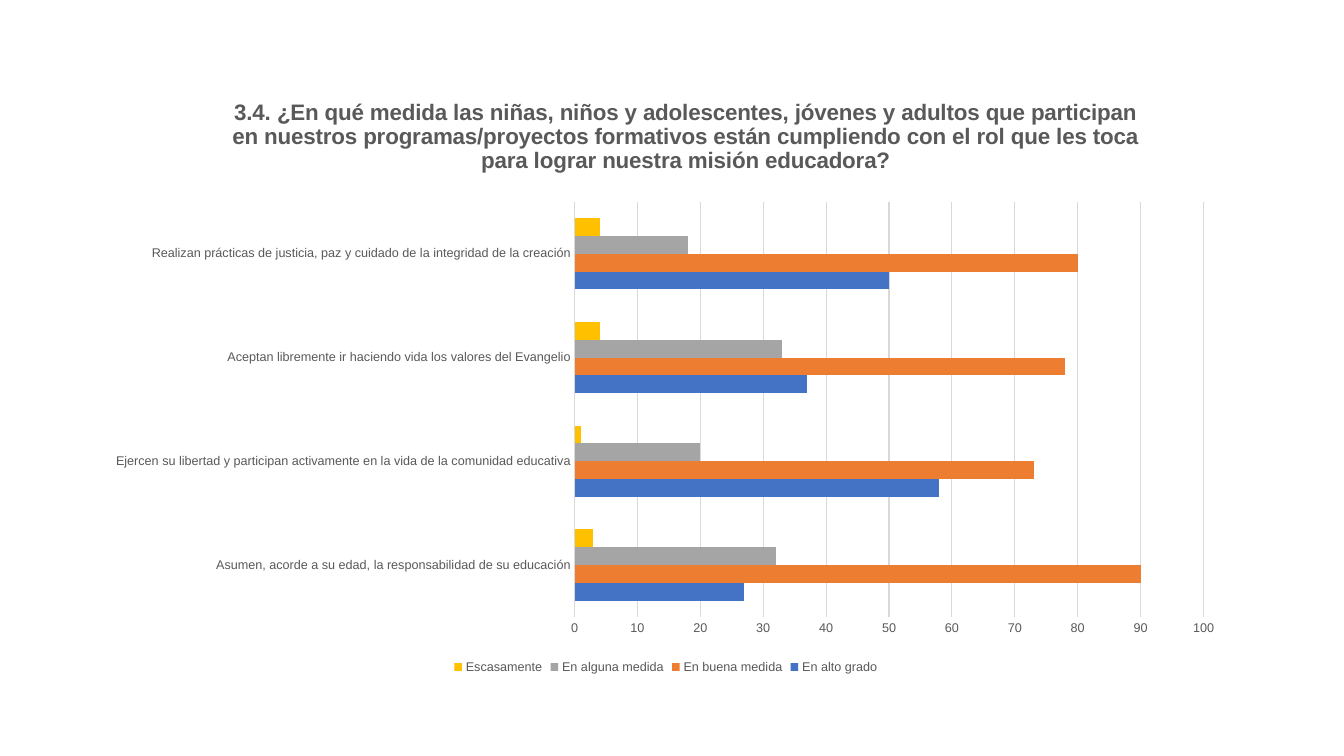
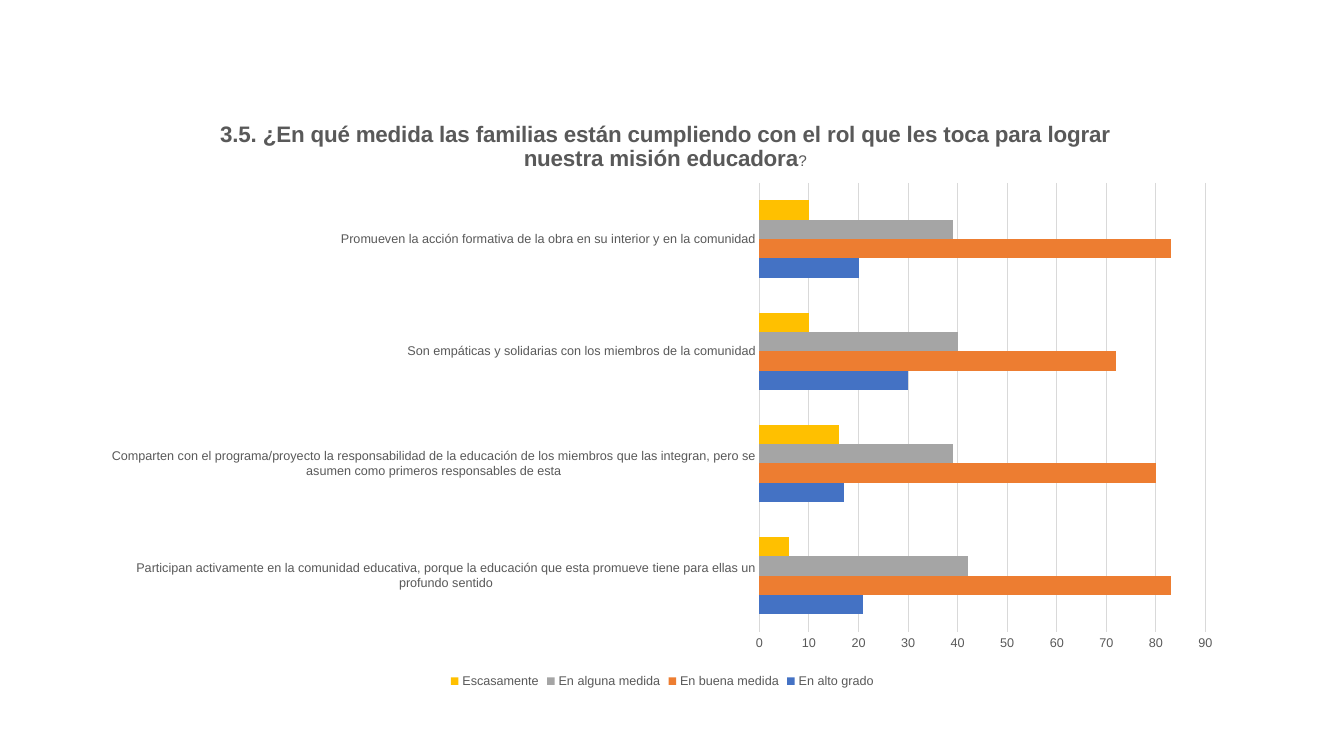
from lxml.etree import SubElement
from pptx import Presentation
from pptx.chart.data import CategoryChartData as ChartData
from pptx.dml.color import RGBColor
from pptx.enum.chart import XL_CHART_TYPE as ChartType
from pptx.enum.chart import XL_LEGEND_POSITION as LegendPosition
from pptx.enum.chart import XL_TICK_MARK as TickMark
from pptx.oxml.ns import qn
from pptx.util import Pt

BLACK = RGBColor(0x00, 0x00, 0x00)
TEXT_GRAY = RGBColor(0x59, 0x59, 0x59)
LINE_GRAY = RGBColor(0xD9, 0xD9, 0xD9)
BLUE = RGBColor(0x44, 0x72, 0xC4)
ORANGE = RGBColor(0xED, 0x7D, 0x31)
GRAY = RGBColor(0xA5, 0xA5, 0xA5)
YELLOW = RGBColor(0xFF, 0xC0, 0x00)

FONT = "Arial"
RATINGS = {
    "En alto grado": BLUE,
    "En buena medida": ORANGE,
    "En alguna medida": GRAY,
    "Escasamente": YELLOW,
}


def style_font(font, size, color=TEXT_GRAY, bold=False):
    font.name = FONT
    font.size = Pt(size)
    font.bold = bold
    font.color.rgb = color


def add_text(paragraph, text, *, size=16, color=TEXT_GRAY, bold=True):
    run = paragraph.add_run()
    run.text = text
    style_font(run.font, size, color, bold)


def place_part(element, target=None, **fractions):
    """Fix a chart part's position (and size) as fractions of the chart."""
    layout = element.find(qn("c:layout"))
    if layout is None:
        layout = element.makeelement(qn("c:layout"))
        element.insert(0, layout)
    for child in list(layout):
        layout.remove(child)
    manual = SubElement(layout, qn("c:manualLayout"))
    settings = {"layoutTarget": target} if target else {}
    settings.update(xMode="edge", yMode="edge", **fractions)
    for name, value in settings.items():
        SubElement(manual, qn(f"c:{name}")).set("val", str(value))


class SurveyDeck:
    def __init__(self):
        self.presentation = Presentation()
        self.presentation.slide_width = Pt(960)
        self.presentation.slide_height = Pt(540)
        self.slide = None

    def add_slide(self):
        blank = self.presentation.slide_layouts[6]
        self.slide = self.presentation.slides.add_slide(blank)

    def add_bar_chart(self, box, plot_box, answers, maximum):
        """Draw answers {category: values in RATINGS order}; boxes are on the slide."""
        data = ChartData()
        data.categories = list(answers)
        for name, values in zip(RATINGS, zip(*answers.values())):
            data.add_series(name, values)
        frame = self.slide.shapes.add_chart(
            ChartType.BAR_CLUSTERED, *map(Pt, box), data)
        chart = frame.chart
        style_font(chart.font, 10, BLACK)

        plot = chart.plots[0]
        plot.gap_width = 182
        plot.vary_by_categories = False
        for series, color in zip(plot.series, RATINGS.values()):
            series.format.fill.solid()
            series.format.fill.fore_color.rgb = color
            series.invert_if_negative = False

        self.style_axes(chart, maximum)
        chart.has_legend = True
        chart.legend.position = LegendPosition.BOTTOM
        chart.legend.include_in_layout = False
        style_font(chart.legend.font, 9)

        left, top, width, height = box
        x, y, w, h = plot_box
        place_part(chart._chartSpace.chart.plotArea, "inner",
                   x=(x - left) / width, y=(y - top) / height,
                   w=w / width, h=h / height)
        return chart

    def style_axes(self, chart, maximum):
        category_axis, value_axis = chart.category_axis, chart.value_axis
        for axis in (category_axis, value_axis):
            axis.major_tick_mark = axis.minor_tick_mark = TickMark.NONE
            style_font(axis.tick_labels.font, 9)
        value_axis.minimum_scale = 0
        value_axis.maximum_scale = maximum
        value_axis.major_unit = 10
        value_axis.has_major_gridlines = True
        value_axis.format.line.fill.background()
        for line in (category_axis.format.line,
                     value_axis.major_gridlines.format.line):
            line.color.rgb = LINE_GRAY
            line.width = Pt(0.75)

    def add_chart_title(self, chart, box, corner, text, ending=""):
        """Title the chart at a slide corner; the ending is small and not bold."""
        chart.has_title = True
        paragraph = chart.chart_title.text_frame.paragraphs[0]
        add_text(paragraph, text)
        if ending:
            add_text(paragraph, ending, size=11, bold=False)
        left, top, width, height = box
        x, y = corner
        place_part(chart.chart_title._element,
                   x=(x - left) / width, y=(y - top) / height)

    def save(self):
        self.presentation.save("out.pptx")


def add_learners_slide(deck):
    deck.add_slide()
    box = (67, 62.6, 817.2, 422)
    chart = deck.add_bar_chart(box, (410.4, 144.3, 449.3, 296.4), {
        "Asumen, acorde a su edad, la responsabilidad de su educación":
            (27, 90, 32, 3),
        "Ejercen su libertad y participan activamente en la vida de la "
        "comunidad educativa": (58, 73, 20, 1),
        "Aceptan libremente ir haciendo vida los valores del Evangelio":
            (37, 78, 33, 4),
        "Realizan prácticas de justicia, paz y cuidado de la integridad "
        "de la creación": (50, 80, 18, 4),
    }, maximum=100)
    deck.add_chart_title(
        chart, box, (163, 67),
        "3.4. ¿En qué medida las niñas, niños y adolescentes, jóvenes y "
        "adultos que participan en nuestros programas/proyectos formativos "
        "están cumpliendo con el rol que les toca para lograr nuestra "
        "misión educadora?")


def add_families_slide(deck):
    deck.add_slide()
    box = (63.4, 67.7, 819.4, 427)
    chart = deck.add_bar_chart(box, (542.5, 130.7, 318.6, 320.7), {
        "Participan activamente en la comunidad educativa, porque la "
        "educación que esta promueve tiene para ellas un profundo sentido":
            (21, 83, 42, 6),
        "Comparten con el programa/proyecto la responsabilidad de la "
        "educación de los miembros que las integran, pero se asumen como "
        "primeros responsables de esta": (17, 80, 39, 16),
        "Son empáticas y solidarias con los miembros de la comunidad":
            (30, 72, 40, 10),
        "Promueven la acción formativa de la obra en su interior y en la "
        "comunidad": (20, 83, 39, 10),
    }, maximum=90)
    deck.add_chart_title(
        chart, box, (155, 84),
        "3.5. ¿En qué medida las familias están cumpliendo con el rol que "
        "les toca para lograr nuestra misión educadora", ending="?")


def main():
    deck = SurveyDeck()
    add_learners_slide(deck)
    add_families_slide(deck)
    deck.save()


if __name__ == "__main__":
    main()
